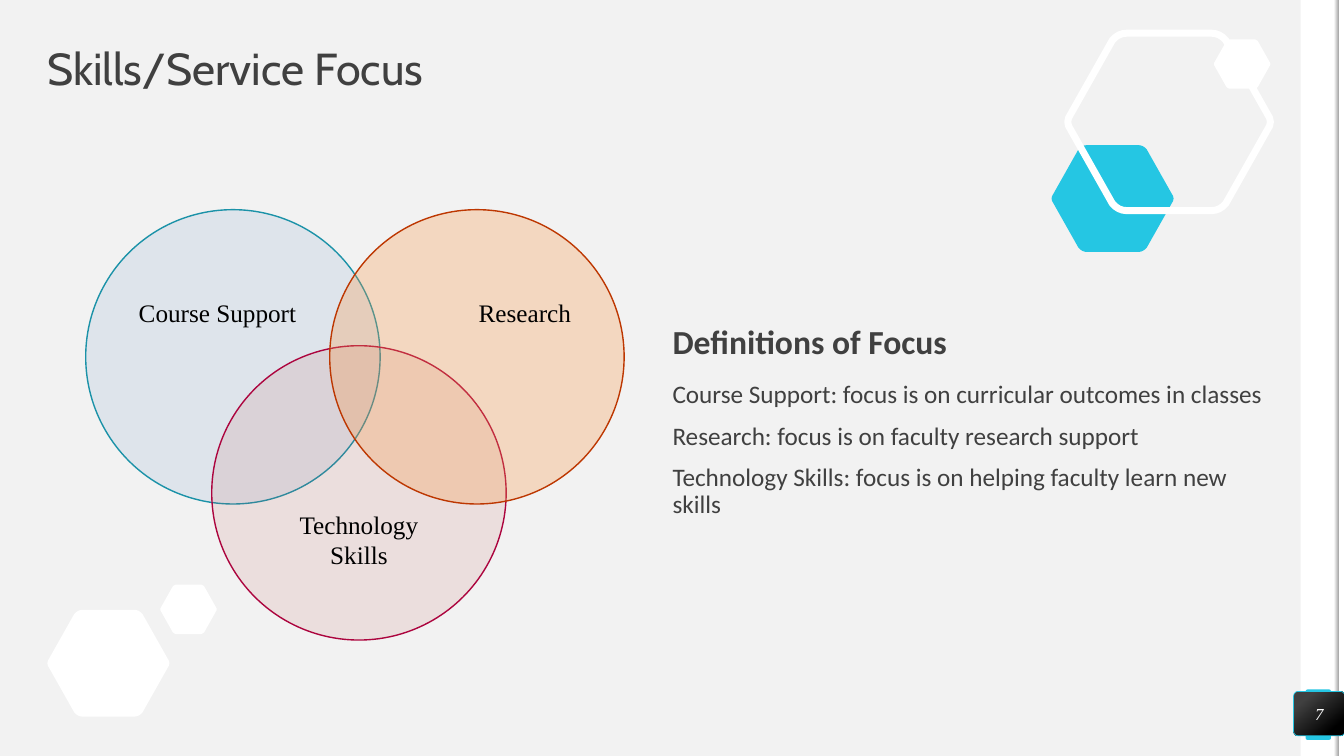
import pptx
import pptx.util
import pptx.dml.color
import pptx.enum.shapes
import pptx.enum.text
import pptx.oxml
import pptx.oxml.ns

Inches, Pt = pptx.util.Inches, pptx.util.Pt
KIND = pptx.enum.shapes.MSO_SHAPE
ALIGN = pptx.enum.text.PP_ALIGN
ANCHOR = pptx.enum.text.MSO_ANCHOR
SERIF = "Times New Roman"

COLORS = {
    "back": "F2F2F2", "white": "FFFFFF", "cyan": "25C6E3", "text": "404040",
    "black": "000000", "grey": "A6A6A6",
    "blue": "4F81BD", "teal": "1B92A8",
    "rose": "C0504D", "wine": "AC043E",
    "peach": "F79646", "rust": "BD3701",
}


def rgb(name):
    return pptx.dml.color.RGBColor.from_string(COLORS[name])


def paint(shape, fill=None, line=None, width=1):
    shape.shadow.inherit = False
    if fill:
        shape.fill.solid()
        shape.fill.fore_color.rgb = rgb(fill)
    else:
        shape.fill.background()
    if line:
        shape.line.color.rgb = rgb(line)
        shape.line.width = Pt(width)
    else:
        shape.line.fill.background()


def blend(shape, stops, angle):
    """Fill with a two-stop gradient of (colour, position) pairs."""
    shape.fill.gradient()
    shape.fill.gradient_angle = angle
    for stop, (name, place) in zip(shape.fill.gradient_stops, stops):
        stop.color.rgb = rgb(name)
        stop.position = place


def fade(shape, percent):
    """Make a solid fill see-through, keeping the given opacity."""
    tone = shape.fill._xPr.find(".//" + pptx.oxml.ns.qn("a:srgbClr"))
    tone.append(pptx.oxml.parse_xml(
        f'<a:alpha {pptx.oxml.ns.nsdecls("a")} val="{percent * 1000}"/>'))


def block(slide, kind, box, fill, line=None, width=1):
    shape = slide.shapes.add_shape(kind, *map(Inches, box))
    paint(shape, fill, line, width)
    return shape


def write(shape, text, size, font, color, align=ALIGN.LEFT, anchor=ANCHOR.TOP,
          pads=(0, 0, 0, 0), bold=None, italic=None, lead=None, gap=0):
    """Set the text; pads are the left, top, right and bottom insets."""
    frame = shape.text_frame
    frame.word_wrap = True
    frame.vertical_anchor = anchor
    (frame.margin_left, frame.margin_top,
     frame.margin_right, frame.margin_bottom) = map(Inches, pads)
    frame.text = text
    for i, para in enumerate(frame.paragraphs):
        para.alignment = align
        para.line_spacing = lead
        if i:
            para.space_before = Pt(gap)
        for run in para.runs:
            run.font.size, run.font.name = Pt(size), font
            run.font.bold, run.font.italic = bold, italic
            run.font.color.rgb = rgb(color)


def label(slide, box, text, size, font, **style):
    shape = slide.shapes.add_textbox(*map(Inches, box))
    write(shape, text, size, font, "text", lead=0.9, **style)


def hexagon(slide, box, fill=None, line=None, width=1):
    """Draw a hexagon with rounded corners that fills the box."""
    left, top, wide, high = box
    right = [((0.71, 0), (0.75, 0), (0.78, 0.04)),
             ((0.985, 0.455), (1.015, 0.5), (0.985, 0.545)),
             ((0.78, 0.96), (0.75, 1), (0.71, 1))]
    turned = [[(1 - x, 1 - y) for x, y in corner] for corner in right]
    points = []
    for a, b, c in right + turned:
        for t in (0, 0.25, 0.5, 0.75, 1):
            x, y = ((1 - t) ** 2 * p + 2 * t * (1 - t) * q + t * t * r
                    for p, q, r in zip(a, b, c))
            points.append((Inches(left + x * wide), Inches(top + y * high)))
    path = slide.shapes.build_freeform(*points[0])
    path.add_line_segments(points[1:], close=True)
    paint(path.convert_to_shape(), fill, line, width)


def edge(slide, left, high):
    """Draw the white strip with its shaded rim down the right side."""
    block(slide, KIND.RECTANGLE, (left, 0, 0.39, high), "white")
    tab = block(slide, KIND.ROUNDED_RECTANGLE,
                (left + 0.05, high - 0.66, 0.25, 0.5), "cyan")
    tab.adjustments[0] = 0.07
    block(slide, KIND.RECTANGLE, (left + 0.38, 0, 0.05, high), "white")
    rim = block(slide, KIND.RECTANGLE, (left + 0.33, 0, 0.05, high), "white")
    blend(rim, [("white", 0), ("grey", 1)], 0)


def decor(slide):
    big, small = (1.21, 1.06), (0.56, 0.49)
    hexagon(slide, (0.47, 6.05, *big), "white")
    hexagon(slide, (10.43, 1.44, *big), "cyan")
    hexagon(slide, (10.59, 0.33, 2.01, 1.76), line="white", width=5)
    hexagon(slide, (1.59, 5.8, *small), "white")
    hexagon(slide, (12.04, 0.39, *small), "white")


def notes(slide, left, top, wide):
    label(slide, (left, top, wide, 0.39), "Definitions of Focus",
          24, "Calibri", bold=True)
    lines = ["Course Support: focus is on curricular outcomes in classes",
             "Research: focus is on faculty research support",
             "Technology Skills: focus is on helping faculty learn new skills"]
    label(slide, (left, top + 0.56, wide, 2.06), "\n".join(lines),
          18, "Calibri", gap=10)


def badge(slide, box):
    shape = block(slide, KIND.ROUNDED_RECTANGLE, box, "black", "cyan", 0.5)
    shape.adjustments[0] = 0.1
    blend(shape, [("text", 0.2), ("black", 0.82)], 310)
    write(shape, "7", 12, SERIF, "white", ALIGN.CENTER, ANCHOR.MIDDLE,
          italic=True)


def venn(slide, left, top, size):
    high, low = (0.1, 0.05, 0.1, 0.92), (0.1, 0.98, 0.1, 0.05)
    circles = [
        (0, 0, "Course Support", "blue", 12, "teal", ALIGN.LEFT, high),
        (1.25, 1.35, "Technology\nSkills", "rose", 12, "wine",
         ALIGN.CENTER, low),
        (2.42, 0, "Research", "peach", 29, "rust", ALIGN.RIGHT, high),
    ]
    for x, y, text, fill, alpha, line, align, pads in circles:
        disc = block(slide, KIND.OVAL, (left + x, top + y, size, size),
                     fill, line)
        fade(disc, alpha)
        write(disc, text, 18, SERIF, "black", align, ANCHOR.MIDDLE, pads)


def main():
    deck = pptx.Presentation()
    deck.slide_width, deck.slide_height = Inches(13.33), Inches(7.5)
    slide = deck.slides.add_slide(deck.slide_layouts[6])
    slide.background.fill.solid()
    slide.background.fill.fore_color.rgb = rgb("back")
    edge(slide, 12.9, 7.5)
    decor(slide)
    label(slide, (0.47, 0.47, 12.4, 0.47), "Skills/Service Focus",
          32, "Cabin", anchor=ANCHOR.MIDDLE)
    notes(slide, 6.67, 3.23, 5.98)
    badge(slide, (12.83, 6.86, 0.51, 0.44))
    venn(slide, 0.85, 2.08, 2.92)
    deck.save("out.pptx")


if __name__ == "__main__":
    main()
